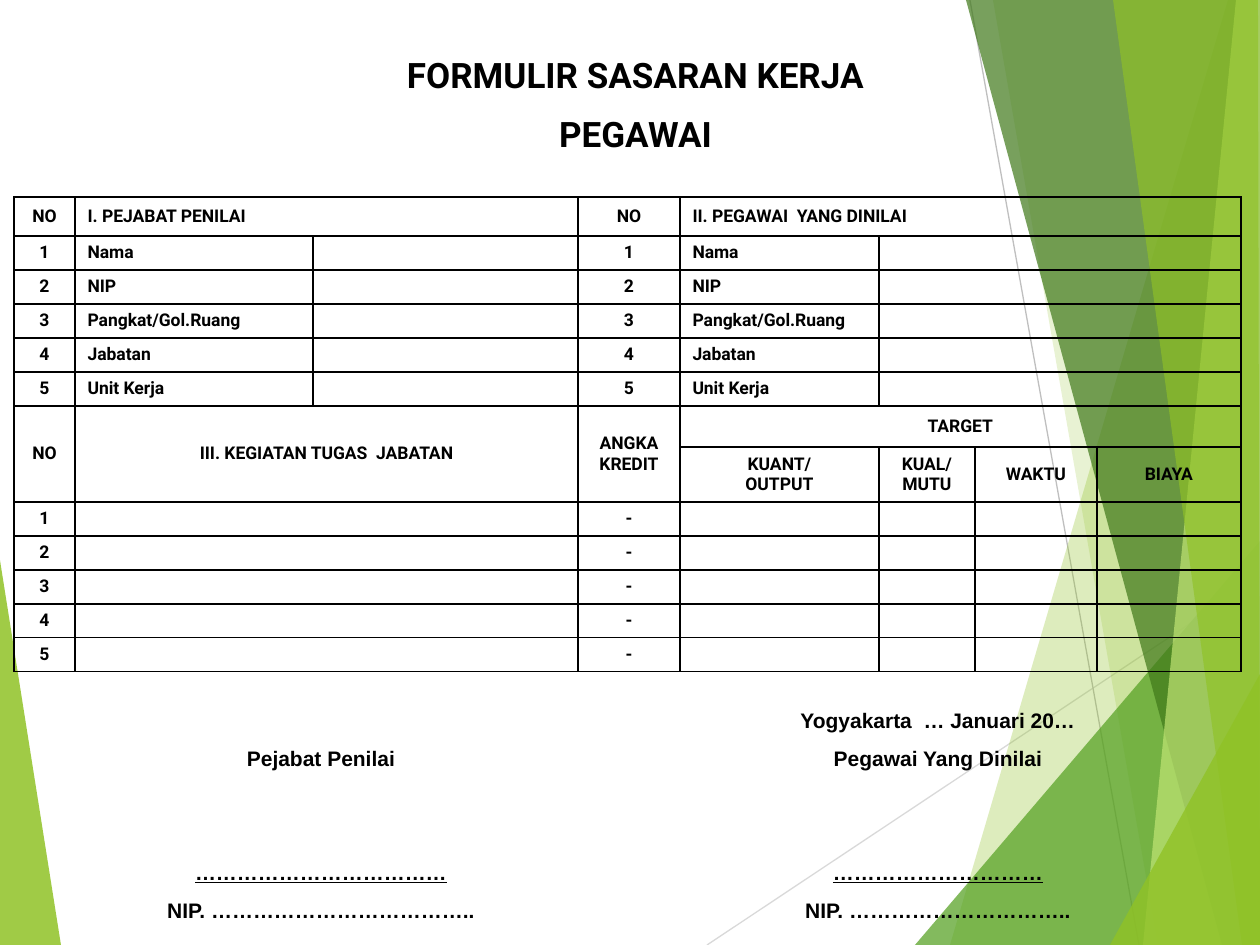
from lxml import etree
from pptx import Presentation
from pptx import util as u
from pptx.dml.color import RGBColor
from pptx.enum import shapes, text
from pptx.oxml import ns

PX = 914400 / 126
W, H = 1260, 945
BLACK = RGBColor(0x00, 0x00, 0x00)
LIME = RGBColor(0x90, 0xC2, 0x26)
GREEN = RGBColor(0x54, 0xA0, 0x21)
DARK = RGBColor(0x3F, 0x78, 0x19)
PALE = RGBColor(0xC0, 0xE4, 0x74)
GREY = RGBColor(0xBF, 0xBF, 0xBF)
LIGHT_GREY = RGBColor(0xD9, 0xD9, 0xD9)
NO_STYLE = "{2D5ABB26-0587-4C30-8999-92F81FD0307C}"
CENTER, JUSTIFY = text.PP_ALIGN.CENTER, text.PP_ALIGN.JUSTIFY
TOP, MIDDLE = text.MSO_ANCHOR.TOP, text.MSO_ANCHOR.MIDDLE

LINES = [((707, H), (W, 577), LIGHT_GREY), ((970, 0), (1139, H), GREY)]
FACETS = [
    ([(0, 560), (61, H), (0, H)], LIME, 85),
    ([(1228, 0), (950, H), (W, H), (W, 0)], LIME, 30),
    ([(993, 0), (1158, H), (W, H), (W, 0)], LIME, 20),
    ([(915, H), (W, 541), (W, H)], GREEN, 72),
    ([(966, 0), (1222, H), (W, H), (W, 0)], DARK, 70),
    ([(1236, 0), (1143, H), (W, H), (W, 0)], PALE, 70),
    ([(1113, 0), (1242, H), (W, H), (1258, 0)], LIME, 65),
    ([(1110, H), (W, 674), (W, H)], LIME, 80),
]

FORM_COLS = [61, 238, 265, 102, 199, 96, 122, 144]
FORM_ROWS = [39] + [34] * 5 + [41, 55] + [34] * 5
FIELDS = ["Nama", "NIP", "Pangkat/Gol.Ruang", "Jabatan", "Unit Kerja"]
TARGETS = ["KUANT/\nOUTPUT", "KUAL/ MUTU", "WAKTU", "BIAYA"]
SIGN_COLS = [494, 123, 494]
SIGN_ROWS = [
    ["", "", "Yogyakarta  … Januari 20…"],
    ["Pejabat Penilai", "", "Pegawai Yang Dinilai"],
    ["", "", ""],
    ["", "", ""],
    ["………………………………", "", "…………………………"],
    ["NIP. ………………………………..", "", "NIP. ………………………….."],
]
SIGN_LINE = 4


def px(n):
    """Turn pixels into EMU."""
    return u.Emu(round(n * PX))


def write(tf, words, size, face, align=CENTER, before=0, underline=None):
    """Fill a text frame with bold black paragraphs, one per line."""
    tf.text = words
    for p in tf.paragraphs:
        p.alignment = align
        p.space_before = u.Pt(before)
        p.font.size, p.font.name = u.Pt(size), face
        p.font.bold, p.font.underline = True, underline
        p.font.color.rgb = BLACK


def add_facet(slide, points, color, opacity):
    """Draw one translucent polygon."""
    fb = slide.shapes.build_freeform(*points[0], scale=PX)
    fb.add_line_segments(points[1:], close=True)
    sp = fb.convert_to_shape()
    sp.shadow.inherit = False
    sp.line.fill.background()
    sp.fill.solid()
    sp.fill.fore_color.rgb = color
    clr = sp._element.spPr.find(".//" + ns.qn("a:srgbClr"))
    etree.SubElement(clr, ns.qn("a:alpha"), val=str(opacity * 1000))


def add_line(slide, start, end, color):
    """Draw one thin straight line."""
    ends = [px(n) for n in (*start, *end)]
    cx = slide.shapes.add_connector(shapes.MSO_CONNECTOR.STRAIGHT, *ends)
    cx.line.color.rgb = color
    cx.line.width = u.Pt(0.75)
    etree.SubElement(cx._element.spPr, ns.qn("a:effectLst"))


def add_border(cell):
    """Give a cell a thin black line on all four sides."""
    tc_pr = cell._tc.get_or_add_tcPr()
    for side in ("lnL", "lnR", "lnT", "lnB"):
        ln = etree.SubElement(tc_pr, ns.qn("a:" + side), w=str(u.Pt(1)))
        fill = etree.SubElement(ln, ns.qn("a:solidFill"))
        etree.SubElement(fill, ns.qn("a:srgbClr"), val=str(BLACK))


def add_grid(slide, left, top, cols, rows):
    """Add an unstyled table with the given column widths and row heights."""
    size = (px(n) for n in (left, top, sum(cols), sum(rows)))
    tbl = slide.shapes.add_table(len(rows), len(cols), *size).table
    tbl.first_row = tbl.horz_banding = False
    tbl._tbl.tblPr.find(ns.qn("a:tableStyleId")).text = NO_STYLE
    for col, width in zip(tbl.columns, cols):
        col.width = px(width)
    for row, height in zip(tbl.rows, rows):
        row.height = px(height)
    return tbl


def form_content():
    """Return the words of the form, row by row."""
    grid = [["NO", "I. PEJABAT PENILAI", "", "NO", "II. PEGAWAI  YANG DINILAI", "", "", ""]]
    for n, field in enumerate(FIELDS, 1):
        grid.append([str(n), field, "", str(n), field, "", "", ""])
    grid.append(["NO", "III. KEGIATAN TUGAS  JABATAN", "", "ANGKA KREDIT", "TARGET", "", "", ""])
    grid.append([""] * 4 + TARGETS)
    for n in range(1, 6):
        grid.append([str(n), "", "", "-", "", "", "", ""])
    return grid


def add_form(slide):
    """Add the main form table."""
    tbl = add_grid(slide, 14, 197, FORM_COLS, FORM_ROWS)
    for i, words in enumerate(form_content()):
        for j, word in enumerate(words):
            cell = tbl.cell(i, j)
            align = JUSTIFY if i < 6 and j in (1, 4) else CENTER
            write(cell.text_frame, word, 10, "Roboto", align)
            cell.vertical_anchor = MIDDLE if i < 8 else TOP
            add_border(cell)
            cell.fill.background()
    spans = [(0, 1, 0, 2), (0, 4, 0, 7), (6, 0, 7, 0), (6, 1, 7, 2), (6, 3, 7, 3), (6, 4, 6, 7)]
    spans += [(i, 5, i, 7) for i in range(1, 6)]
    spans += [(i, 1, i, 2) for i in range(8, 13)]
    for r1, c1, r2, c2 in spans:
        tbl.cell(r1, c1).merge(tbl.cell(r2, c2))


def add_signatures(slide):
    """Add the borderless signature table."""
    tbl = add_grid(slide, 74, 703, SIGN_COLS, [38] * len(SIGN_ROWS))
    for i, words in enumerate(SIGN_ROWS):
        for j, word in enumerate(words):
            cell = tbl.cell(i, j)
            write(cell.text_frame, word, 12, "Arial", underline=i == SIGN_LINE)
            cell.fill.background()


def add_title(slide):
    """Place the two-line heading in front of the facets."""
    sp = slide.shapes.title
    slide.shapes._spTree.append(sp._element)
    sp.left, sp.top, sp.width, sp.height = (px(n) for n in (333, 47, 605, 118))
    tf = sp.text_frame
    tf.word_wrap = True
    tf.auto_size = text.MSO_AUTO_SIZE.NONE
    tf.vertical_anchor = TOP
    write(tf, "FORMULIR SASARAN KERJA\nPEGAWAI", 20, "Roboto", before=10)


def main():
    """Build the slide and save it."""
    prs = Presentation()
    prs.slide_width, prs.slide_height = px(W), px(H)
    slide = prs.slides.add_slide(prs.slide_layouts[5])
    add_facet(slide, *FACETS[0])
    for line in LINES:
        add_line(slide, *line)
    for facet in FACETS[1:]:
        add_facet(slide, *facet)
    add_title(slide)
    add_form(slide)
    add_signatures(slide)
    prs.save("out.pptx")


if __name__ == "__main__":
    main()
